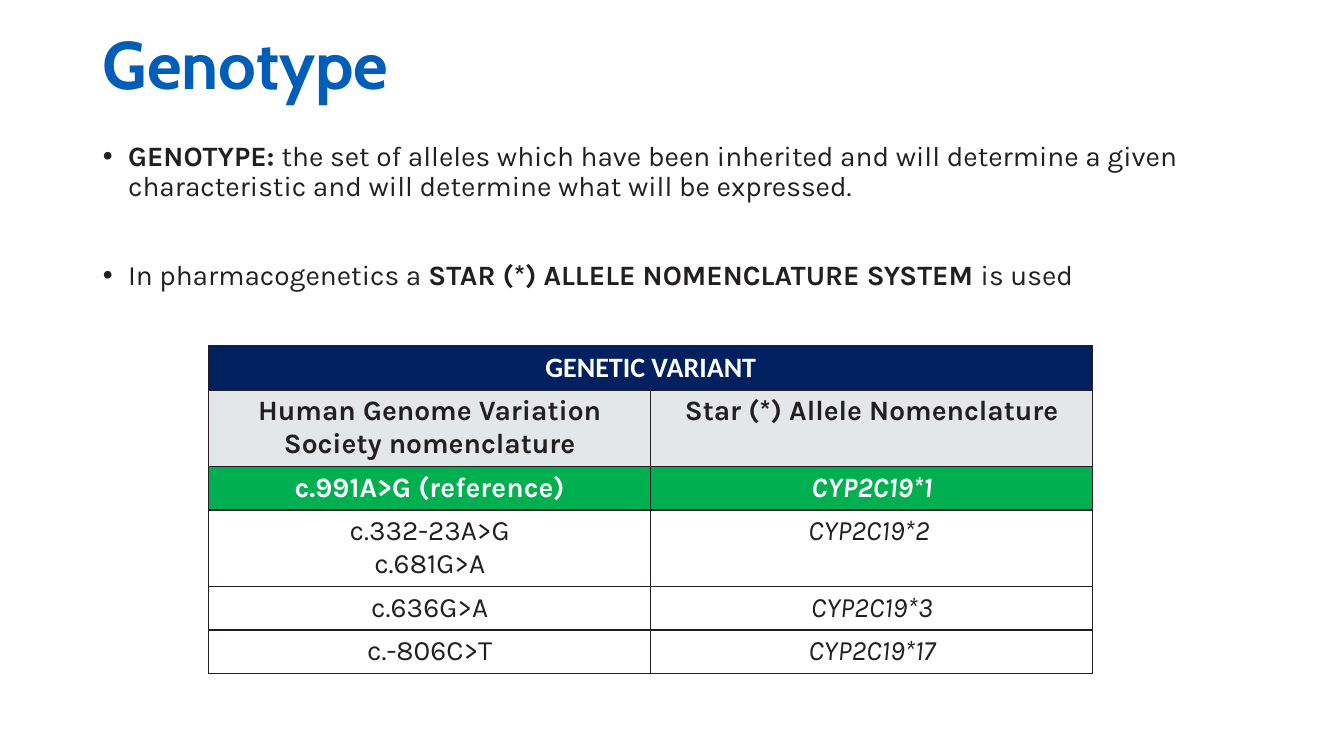
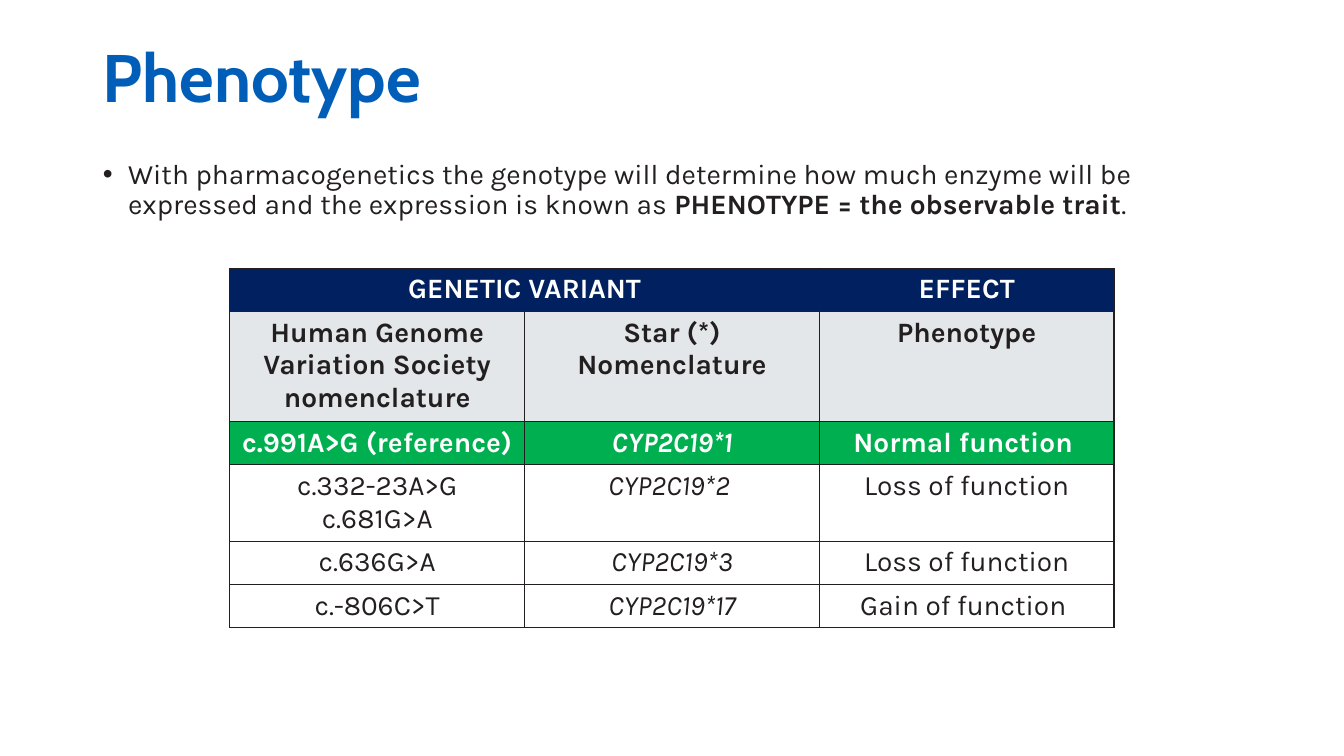
from dataclasses import dataclass

from lxml.etree import SubElement
from pptx import Presentation
from pptx.dml.color import RGBColor
from pptx.enum.text import MSO_ANCHOR as Anchor, MSO_AUTO_SIZE as AutoSize, PP_ALIGN as Align
from pptx.oxml.ns import qn
from pptx.util import Inches, Pt


@dataclass(frozen=True)
class Theme:
    blue: str = "005EB8"
    ink: str = "231F20"
    white: str = "FFFFFF"
    navy: str = "002060"
    grey: str = "E4E7E9"
    green: str = "00B050"
    title_font: str = "Cabin"
    body_font: str = "Karla"
    banner_font: str = "Calibri"
    title_size: float = 48
    body_size: float = 20
    line_spacing: float = 0.9
    border: float = 1


THEME = Theme()


def apply(target, values):
    for name, value in values.items():
        setattr(target, name, value)


def style_font(font, color, **values):
    apply(font, values)
    font.color.rgb = RGBColor.from_string(color)


class SlideBuilder:
    """Holds the style and the slide being built."""

    left, width = 0.92, 11.5
    text_line, cell_padding = 0.33, 0.1

    def __init__(self, deck, theme):
        self.deck, self.theme = deck, theme
        self.slide = None

    def new_slide(self):
        self.slide = self.deck.slides.add_slide(self.deck.slide_layouts[1])

    def place(self, holder, top, height, anchor):
        apply(holder, {"left": Inches(self.left), "top": Inches(top),
                       "width": Inches(self.width), "height": Inches(height)})
        apply(holder.text_frame, {"word_wrap": True, "auto_size": AutoSize.NONE,
                                  "vertical_anchor": anchor})
        return holder.text_frame

    def title(self, text, top):
        theme = self.theme
        frame = self.place(self.slide.shapes.title, top, 0.8, Anchor.MIDDLE)
        para = frame.paragraphs[0]
        apply(para, {"text": text, "alignment": Align.LEFT, "line_spacing": theme.line_spacing})
        style_font(para.runs[0].font, theme.blue, name=theme.title_font,
                   size=Pt(theme.title_size), bold=True)

    def bullets(self, items, top, height, gap=0):
        """Each item is a list of (text, bold) spans."""
        theme = self.theme
        frame = self.place(self.slide.placeholders[1], top, height, Anchor.TOP)
        for index, spans in enumerate(items):
            para = frame.add_paragraph() if index else frame.paragraphs[0]
            apply(para, {"line_spacing": theme.line_spacing, "alignment": Align.LEFT,
                         "space_before": Pt(gap if index else 0)})
            props = para._p.get_or_add_pPr()
            props.set("marL", str(Inches(0.25)))
            props.set("indent", str(Inches(-0.25)))
            SubElement(props, qn("a:buFont"), typeface="Arial")
            SubElement(props, qn("a:buChar"), char="•")
            for text, bold in spans:
                span = para.add_run()
                span.text = text
                style_font(span.font, theme.ink, name=theme.body_font,
                           size=Pt(theme.body_size), bold=bold)

    def border(self, cell):
        props = cell._tc.get_or_add_tcPr()
        for side in ("a:lnL", "a:lnR", "a:lnT", "a:lnB"):
            line = SubElement(props, qn(side), w=str(Pt(self.theme.border)))
            fill = SubElement(line, qn("a:solidFill"))
            SubElement(fill, qn("a:srgbClr"), val=self.theme.ink)

    def table(self, rows, line_counts, left, top, banner_font=None):
        """First row is the banner, then column heads, the reference and the variants."""
        theme = self.theme
        width, columns = 8.77, len(rows[0])
        heights = [self.cell_padding + self.text_line * count for count in line_counts]
        grid = self.slide.shapes.add_table(
            len(rows), columns, Inches(left), Inches(top),
            Inches(width), Inches(sum(heights))).table
        apply(grid, {"first_row": False, "horz_banding": False})
        for column in grid.columns:
            column.width = Inches(width / columns)
        for row, height in zip(grid.rows, heights):
            row.height = Inches(height)

        looks = [(theme.navy, theme.white), (theme.grey, theme.ink), (theme.green, theme.white)]
        for r, texts in enumerate(rows):
            fill, color = looks[r] if r < len(looks) else (None, theme.ink)
            for c, text in enumerate(texts):
                cell = grid.cell(r, c)
                self.border(cell)
                if fill:
                    cell.fill.solid()
                    cell.fill.fore_color.rgb = RGBColor.from_string(fill)
                else:
                    cell.fill.background()
                cell.text_frame.text = text
                font = banner_font if banner_font and r == 0 else theme.body_font
                for para in cell.text_frame.paragraphs:
                    para.alignment = Align.CENTER
                    for span in para.runs:
                        style_font(span.font, color, name=font, size=Pt(theme.body_size),
                                   bold=fill is not None, italic=r >= 2 and c == 1)
        grid.cell(0, 0).merge(grid.cell(0, 1))


# Rows that both tables share
BANNER = ["GENETIC VARIANT", ""]
SOCIETY = "Human Genome Variation Society nomenclature"
VARIANTS = [
    ["c.991A>G (reference)", "CYP2C19*1"],
    ["c.332-23A>G\nc.681G>A", "CYP2C19*2 "],
    ["c.636G>A", "CYP2C19*3"],
    ["c.-806C>T", "CYP2C19*17"],
]
EFFECTS = ["Normal function ", "Loss of function", "Loss of function", "Gain of function "]


def genotype(builder):
    builder.new_slide()
    builder.title("Genotype", top=0.27)
    builder.bullets([
        [("GENOTYPE: ", True),
         ("the set of alleles which have been inherited and will determine a given "
          "characteristic and will determine what will be expressed.", False)],
        [("In pharmacogenetics a ", False),
         ("STAR (*) ALLELE NOMENCLATURE SYSTEM ", True),
         ("is used", False)],
    ], top=1.36, height=1.65, gap=42)
    builder.table([BANNER, [SOCIETY, "Star (*) Allele Nomenclature"], *VARIANTS],
                  line_counts=(1, 2, 1, 2, 1, 1), left=2.07, top=3.43,
                  banner_font=builder.theme.banner_font)


def phenotype(builder):
    builder.new_slide()
    builder.title("Phenotype", top=0.4)
    builder.bullets([
        [("With pharmacogenetics the genotype will determine how much enzyme will be "
          "expressed and the expression is known as ", False),
         ("PHENOTYPE = the observable trait", True),
         (".", False)],
    ], top=1.54, height=0.94)
    variants = [[*row, effect] for row, effect in zip(VARIANTS, EFFECTS)]
    builder.table([[*BANNER, "EFFECT"], [SOCIETY, "Star (*) Nomenclature", "Phenotype"], *variants],
                  line_counts=(1, 3, 1, 2, 1, 1), left=2.28, top=2.66)


def main():
    deck = Presentation()
    apply(deck, {"slide_width": Inches(13.33), "slide_height": Inches(7.5)})
    builder = SlideBuilder(deck, THEME)
    genotype(builder)
    phenotype(builder)
    deck.save("out.pptx")


if __name__ == "__main__":
    main()
